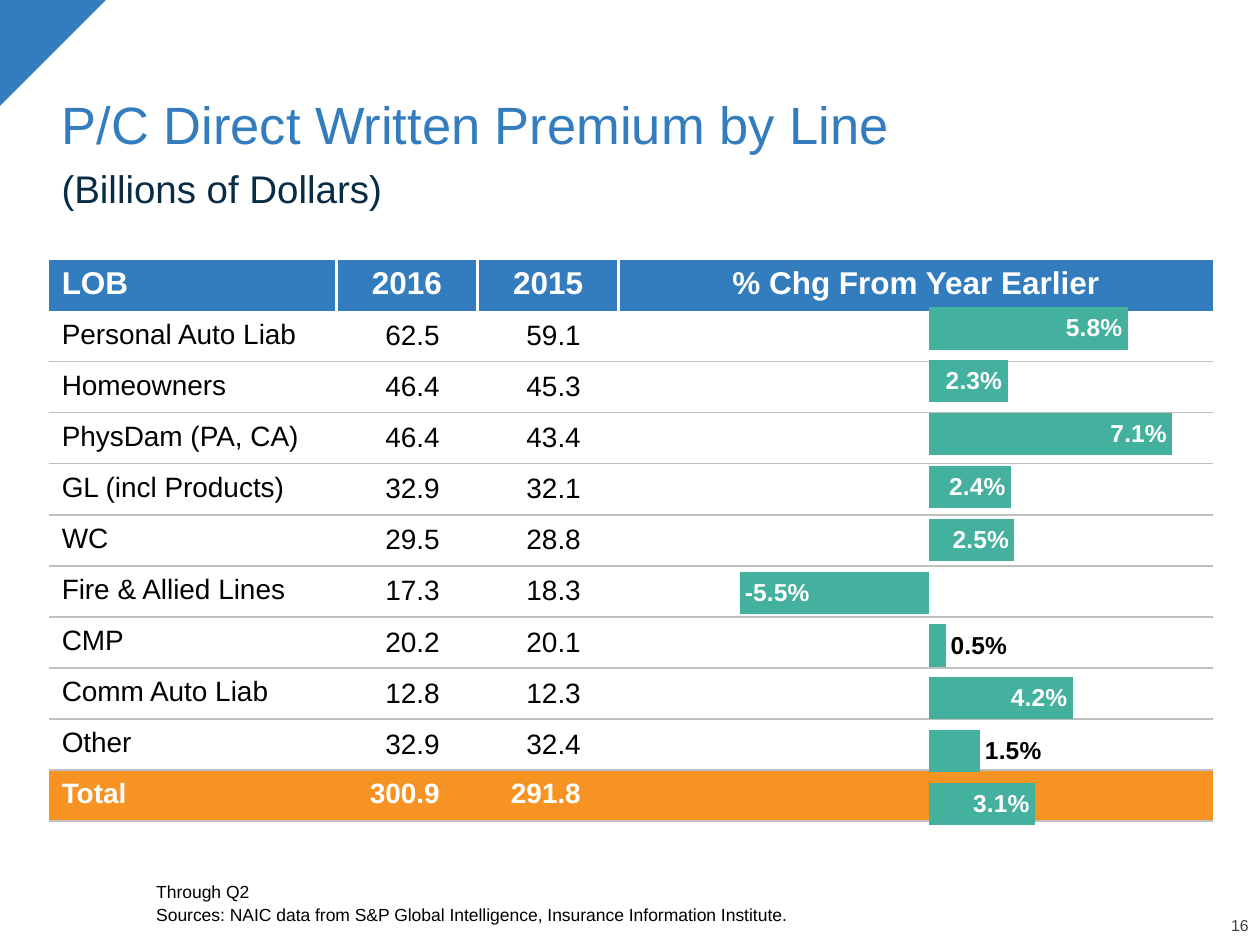
from lxml import etree
from pptx import Presentation
from pptx.chart.data import CategoryChartData
from pptx.dml.color import RGBColor
from pptx.enum.chart import XL_CHART_TYPE as ChartType, XL_LABEL_POSITION as LabelPos
from pptx.enum.shapes import MSO_SHAPE as Preset
from pptx.enum.text import MSO_ANCHOR as Anchor, MSO_AUTO_SIZE as AutoSize, PP_ALIGN as Align
from pptx.oxml import parse_xml
from pptx.oxml.ns import nsdecls, qn
from pptx.util import Inches, Pt

BLUE, TEAL, ORANGE, NAVY = "337DBE", "43B19E", "F69322", "072C44"
WHITE, BLACK, RULE, GRAY = "FFFFFF", "000000", "BFBFBF", "404040"
PLAIN_TABLE = "{2D5ABB26-0587-4C30-8999-92F81FD0307C}"
COLUMNS, ROWS = 100, 75

LINES = [
    ("Personal Auto Liab", "62.5", "59.1", 0.058),
    ("Homeowners", "46.4", "45.3", 0.023),
    ("PhysDam (PA, CA)", "46.4", "43.4", 0.071),
    ("GL (incl Products)", "32.9", "32.1", 0.024),
    ("WC", "29.5", "28.8", 0.025),
    ("Fire & Allied Lines", "17.3", "18.3", -0.055),
    ("CMP", "20.2", "20.1", 0.005),
    ("Comm Auto Liab", "12.8", "12.3", 0.042),
    ("Other", "32.9", "32.4", 0.015),
    ("Total", "300.9", "291.8", 0.031),
]


def color(hex_code):
    return RGBColor.from_string(hex_code)


def style_font(font, size, ink, bold=False):
    font.name, font.size, font.bold = "Arial", Pt(size), bold
    font.color.rgb = color(ink)


def write(frame, text, size=16, ink=BLACK, bold=False, align=Align.LEFT, spacing=0.9, before=0):
    for index, line in enumerate(text.split("\n")):
        paragraph = frame.add_paragraph() if index else frame.paragraphs[0]
        paragraph.alignment, paragraph.line_spacing = align, spacing
        paragraph.space_before = Pt(before if index else 0)
        run = paragraph.add_run()
        run.text = line
        style_font(run.font, size, ink, bold)


def draw_border(cell, side, ink, width):
    properties = cell._tc.get_or_add_tcPr()
    properties.append(parse_xml(
        f'<a:ln{side} {nsdecls("a")} w="{Pt(width)}"><a:solidFill>'
        f'<a:srgbClr val="{ink}"/></a:solidFill></a:ln{side}>'))


class Deck:
    def __init__(self):
        self.show = Presentation()
        self.show.slide_width, self.show.slide_height = Inches(10), Inches(7.5)
        self.slide = self.show.slides.add_slide(self.show.slide_layouts[5])

    def place(self, left, top, width, height):
        column = self.show.slide_width / COLUMNS
        row = self.show.slide_height / ROWS
        return [round(v) for v in (left * column, top * row, width * column, height * row)]

    def title(self, text, area, **style):
        heading = self.slide.shapes.title
        heading.left, heading.top, heading.width, heading.height = self.place(*area)
        frame = heading.text_frame
        frame.auto_size, frame.vertical_anchor = AutoSize.NONE, Anchor.BOTTOM
        write(frame, text, **style)

    def text(self, text, area, anchor=Anchor.TOP, flush=False, **style):
        frame = self.slide.shapes.add_textbox(*self.place(*area)).text_frame
        frame.word_wrap, frame.vertical_anchor = True, anchor
        if flush:
            frame.margin_left = frame.margin_right = frame.margin_top = frame.margin_bottom = 0
        write(frame, text, **style)

    def corner(self, area):
        triangle = self.slide.shapes.add_shape(Preset.RIGHT_TRIANGLE, *self.place(*area))
        triangle.rotation = 90
        triangle.shadow.inherit = False
        triangle.fill.solid()
        triangle.fill.fore_color.rgb = color(BLUE)
        triangle.line.fill.background()

    def cell(self, cell, text, borders, fill=None, inset=0.1, **style):
        cell.vertical_anchor, cell.margin_right = Anchor.MIDDLE, Inches(inset)
        for side, ink, width in borders:
            draw_border(cell, side, ink, width)
        if fill:
            cell.fill.solid()
            cell.fill.fore_color.rgb = color(fill)
        else:
            cell.fill.background()
        if text:
            write(cell.text_frame, text, **style)

    def table(self, header, records, widths, area):
        grid = self.slide.shapes.add_table(
            len(records) + 1, len(header), *self.place(*area)).table
        grid.first_row = grid.horz_banding = False
        grid._tbl.tblPr.find(qn("a:tableStyleId")).text = PLAIN_TABLE
        for column, width in zip(grid.columns, widths):
            column.width = self.place(0, 0, width, 0)[2]
        last_column = len(header) - 1
        for c, label in enumerate(header):
            borders = [("L", WHITE, 1.5)] if c else []
            borders += [("R", WHITE, 1.5)] if c < last_column else []
            self.cell(grid.cell(0, c), label, borders, BLUE, size=18, ink=WHITE,
                      bold=True, align=Align.CENTER if c else Align.LEFT)
        for r, record in enumerate(records, 1):
            total = r == len(records)
            borders = [("T", RULE, 1)] if r > 1 else []
            borders.append(("B", RULE, 1.5 if total else 1))
            for c, value in enumerate((*record, "")):
                self.cell(grid.cell(r, c), value, borders, ORANGE if total else None,
                          inset=0.3 if c else 0.1, ink=WHITE if total else BLACK,
                          bold=total, align=Align.RIGHT if c else Align.LEFT,
                          spacing=0.9 if total or not c else 1.0)

    def bars(self, changes, area, outside_below, limit):
        data = CategoryChartData(number_format="0.0%")
        data.categories = [str(n) for n in range(1, len(changes) + 1)]
        data.add_series("Series 1", changes)
        chart = self.slide.shapes.add_chart(
            ChartType.BAR_CLUSTERED, *self.place(*area), data).chart
        chart.has_legend = chart.has_title = False
        style_font(chart.font, 10, BLACK)
        for axis in (chart.category_axis, chart.value_axis):
            axis.has_major_gridlines = axis.visible = False
        chart.category_axis.reverse_order = True
        chart.value_axis.minimum_scale, chart.value_axis.maximum_scale = -limit, limit

        plot = chart.plots[0]
        plot.gap_width, plot.vary_by_categories = 25, False
        series = plot.series[0]
        series.invert_if_negative = False
        series.format.fill.solid()
        series.format.fill.fore_color.rgb = color(TEAL)
        labels = series.data_labels
        labels.show_value, labels.position = True, LabelPos.INSIDE_END
        labels.number_format, labels.number_format_is_linked = "0.0%", False
        style_font(labels.font, 14, WHITE, True)
        for index, change in enumerate(changes):
            if 0 <= change < outside_below:
                label = series.points[index].data_label
                style_font(label.font, 14, BLACK, True)
                label.position = LabelPos.OUTSIDE_END
        self.fill_frame(chart, 0.02)

    def fill_frame(self, chart, margin):
        area = chart._chartSpace.chart.plotArea
        for old in area.findall(qn("c:layout")):
            area.remove(old)
        layout = etree.Element(qn("c:layout"))
        manual = etree.SubElement(layout, qn("c:manualLayout"))
        share = 1 - 2 * margin
        for tag, value in (("layoutTarget", "inner"), ("xMode", "edge"), ("yMode", "edge"),
                           ("x", margin), ("y", margin), ("w", share), ("h", share)):
            etree.SubElement(manual, qn(f"c:{tag}")).set("val", str(value))
        area.insert(0, layout)


def main():
    deck = Deck()
    deck.corner((0, 0, 8.4, 8.4))
    deck.title("P/C Direct Written Premium by Line", (3.9, 2.5, 92.5, 10.4), size=30, ink=BLUE)
    deck.text("(Billions of Dollars)", (3.9, 13, 92.5, 4.3), size=22, ink=NAVY)
    deck.table(("LOB", "2016", "2015", "% Chg From Year Earlier"),
               [line[:3] for line in LINES], (22.8, 11.2, 11.2, 47.2), (3.9, 20.6, 92.4, 44.6))
    deck.bars([line[3] for line in LINES], (51, 23.1, 45.4, 43.7), outside_below=0.02, limit=0.08)
    deck.text("Through Q2\nSources: NAIC data from S&P Global Intelligence, Insurance Information Institute.",
              (12.4, 68.9, 84, 4.5), Anchor.BOTTOM, flush=True, size=10, before=2)
    deck.text("16", (94.3, 72.9, 4.8, 1.3), Anchor.BOTTOM, flush=True,
              size=9, ink=GRAY, align=Align.RIGHT)
    deck.show.save("out.pptx")


if __name__ == "__main__":
    main()
